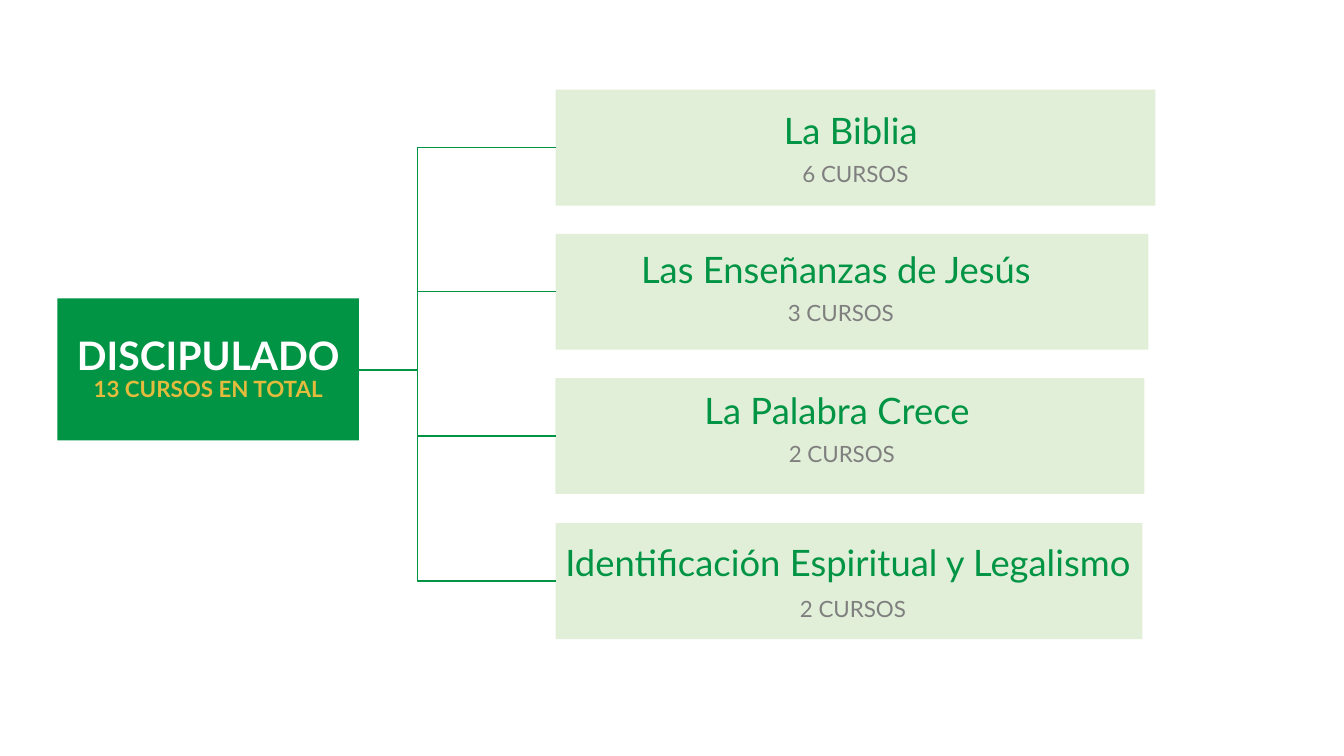
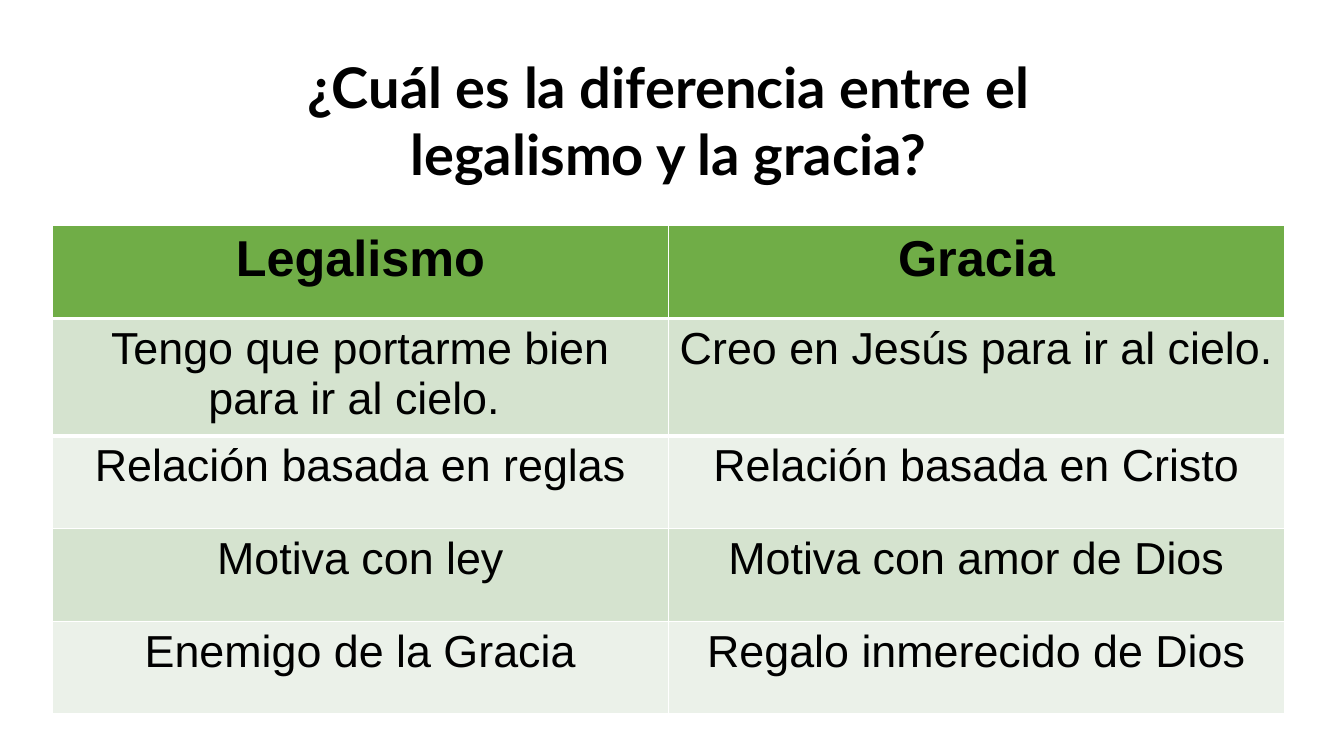
from dataclasses import dataclass

from lxml import etree
from pptx import Presentation
from pptx.dml.color import RGBColor
from pptx.enum.shapes import MSO_CONNECTOR, MSO_SHAPE
from pptx.enum.text import MSO_ANCHOR, MSO_AUTO_SIZE, PP_ALIGN
from pptx.oxml import parse_xml
from pptx.oxml.ns import nsdecls, qn
from pptx.util import Pt

PX = 9144  # EMU in one px, 100 px to the inch
RECTANGLE = MSO_SHAPE.RECTANGLE
ELBOW = MSO_CONNECTOR.ELBOW
CENTER = PP_ALIGN.CENTER
TOP, MIDDLE = MSO_ANCHOR.TOP, MSO_ANCHOR.MIDDLE
LEFT_SIDE = 1


@dataclass(frozen=True)
class Theme:
    heading_font: str = "Lato"
    table_font: str = "Arial"
    green: str = "009444"
    pale_green: str = "E1EFD8"
    gold: str = "E3BB3D"
    gray: str = "7F7F7F"
    white: str = "FFFFFF"
    black: str = "000000"
    header_fill: str = "70AD47"
    row_fills: tuple = ("D5E3CF", "EBF1E9")
    title_size: int = 40
    header_size: int = 36
    cell_size: int = 32
    root_size: int = 28
    card_size: int = 26
    detail_size: int = 16


THEME = Theme()


def add_run(paragraph, text, size, color, font=THEME.heading_font, bold=False):
    paragraph.alignment = CENTER
    run = paragraph.add_run()
    run.text = text
    run.font.name = font
    run.font.size = Pt(size)
    run.font.bold = bold
    run.font.color.rgb = RGBColor.from_string(color)


def add_box(slide, left, top, width, height, fill, shift_x=0, shift_y=0):
    """Add a plain rectangle whose text centre is shifted by its margins."""
    shape = slide.shapes.add_shape(
        RECTANGLE, left * PX, top * PX, width * PX, height * PX)
    shape.shadow.inherit = False
    shape.fill.solid()
    shape.fill.fore_color.rgb = RGBColor.from_string(fill)
    shape.line.fill.background()
    frame = shape.text_frame
    frame.word_wrap = True
    frame.vertical_anchor = MIDDLE
    frame.margin_left = max(0, 2 * shift_x) * PX
    frame.margin_right = max(0, -2 * shift_x) * PX
    frame.margin_top = max(0, 2 * shift_y) * PX
    frame.margin_bottom = max(0, -2 * shift_y) * PX
    return shape


presentation = Presentation()
presentation.slide_width = 1333 * PX
presentation.slide_height = 750 * PX
title_only, blank = presentation.slide_layouts[5], presentation.slide_layouts[6]

# Slide 1: course tree
slide = presentation.slides.add_slide(blank)
root_left, root_top, root_width, root_height = 57, 296, 299, 141
card_left, card_top, card_height = 551, 89, 115
branch_x, branch_y = 277, 367  # the branches start behind the root box

# Course cards: name, detail, width, text shift, line spacing of the detail
courses = [
    ("La Biblia ", "6 CURSOS", 595, 0, 0, 0.9),
    ("Las Enseñanzas de Jesús ", "3 CURSOS", 588, -11, -5, 0.9),
    ("La Palabra Crece ", "2 CURSOS", 584, -8, -8, 0.9),
    ("Identificación Espiritual y Legalismo ", "2 CURSOS", 582, 4, 0, 1.0),
]
for index, (name, detail, width, shift_x, shift_y, spacing) in enumerate(courses):
    top = card_top + index * 430 // 3
    card = add_box(slide, card_left, top, width, card_height,
                   THEME.pale_green, shift_x, shift_y)
    add_run(card.text_frame.paragraphs[0], name, THEME.card_size, THEME.green)
    paragraph = card.text_frame.add_paragraph()
    paragraph.space_before = Pt(8)
    paragraph.line_spacing = spacing
    add_run(paragraph, detail, THEME.detail_size, THEME.gray)

    # Branch from the root to this card
    connector = slide.shapes.add_connector(
        ELBOW, branch_x * PX, branch_y * PX,
        card_left * PX, (top + card_height // 2) * PX)
    connector.end_connect(card, LEFT_SIDE)
    connector.line.color.rgb = RGBColor.from_string(THEME.green)
    connector.line.width = Pt(1)
    etree.SubElement(connector._element.spPr, qn("a:effectLst"))

# Root box, in front of the branches
root = add_box(slide, root_left, root_top, root_width, root_height, THEME.green)
paragraph = root.text_frame.paragraphs[0]
paragraph.line_spacing = 0.9
add_run(paragraph, "DISCIPULADO", THEME.root_size, THEME.white, bold=True)
paragraph.add_line_break()
add_run(paragraph, "13 CURSOS EN TOTAL", THEME.detail_size, THEME.gold, bold=True)

# Slide 2: comparison table
slide = presentation.slides.add_slide(title_only)

# Title
title = slide.shapes.title
title.left, title.top, title.width, title.height = (
    198 * PX, 47 * PX, 930 * PX, 145 * PX)
title.text_frame.word_wrap = True
title.text_frame.auto_size = MSO_AUTO_SIZE.SHAPE_TO_FIT_TEXT
title.text_frame.vertical_anchor = TOP
add_run(title.text_frame.paragraphs[0],
        "¿Cuál es la diferencia entre el legalismo y la gracia?",
        THEME.title_size, THEME.black, bold=True)

# Table
rows = [
    ("Legalismo", "Gracia"),
    ("Tengo que portarme bien para ir al cielo. ", "Creo en Jesús para ir al cielo. "),
    ("Relación basada en reglas", "Relación basada en Cristo"),
    ("Motiva con ley", "Motiva con amor de Dios"),
    ("Enemigo de la Gracia", "Regalo inmerecido de Dios"),
]
row_heights = [92, 115, 92, 92, 91]
table = slide.shapes.add_table(
    len(rows), 2, 52 * PX, 224 * PX, 1222 * PX, sum(row_heights) * PX).table
# Thick rule between the header and the first row
header_rule = {0: "lnB", 1: "lnT"}
for row_index, texts in enumerate(rows):
    table.rows[row_index].height = row_heights[row_index] * PX
    is_header = row_index == 0
    fill = THEME.header_fill if is_header else THEME.row_fills[(row_index - 1) % 2]
    size = THEME.header_size if is_header else THEME.cell_size
    for column_index, text in enumerate(texts):
        cell = table.cell(row_index, column_index)
        cell.fill.solid()
        cell.fill.fore_color.rgb = RGBColor.from_string(fill)
        add_run(cell.text_frame.paragraphs[0], text, size, THEME.black,
                THEME.table_font, bold=is_header)
        if row_index in header_rule:
            side = header_rule[row_index]
            border = parse_xml(
                f'<a:{side} {nsdecls("a")} w="{Pt(3)}"><a:solidFill>'
                f'<a:srgbClr val="{THEME.white}"/></a:solidFill></a:{side}>')
            cell._tc.get_or_add_tcPr().insert(0, border)

presentation.save("out.pptx")
